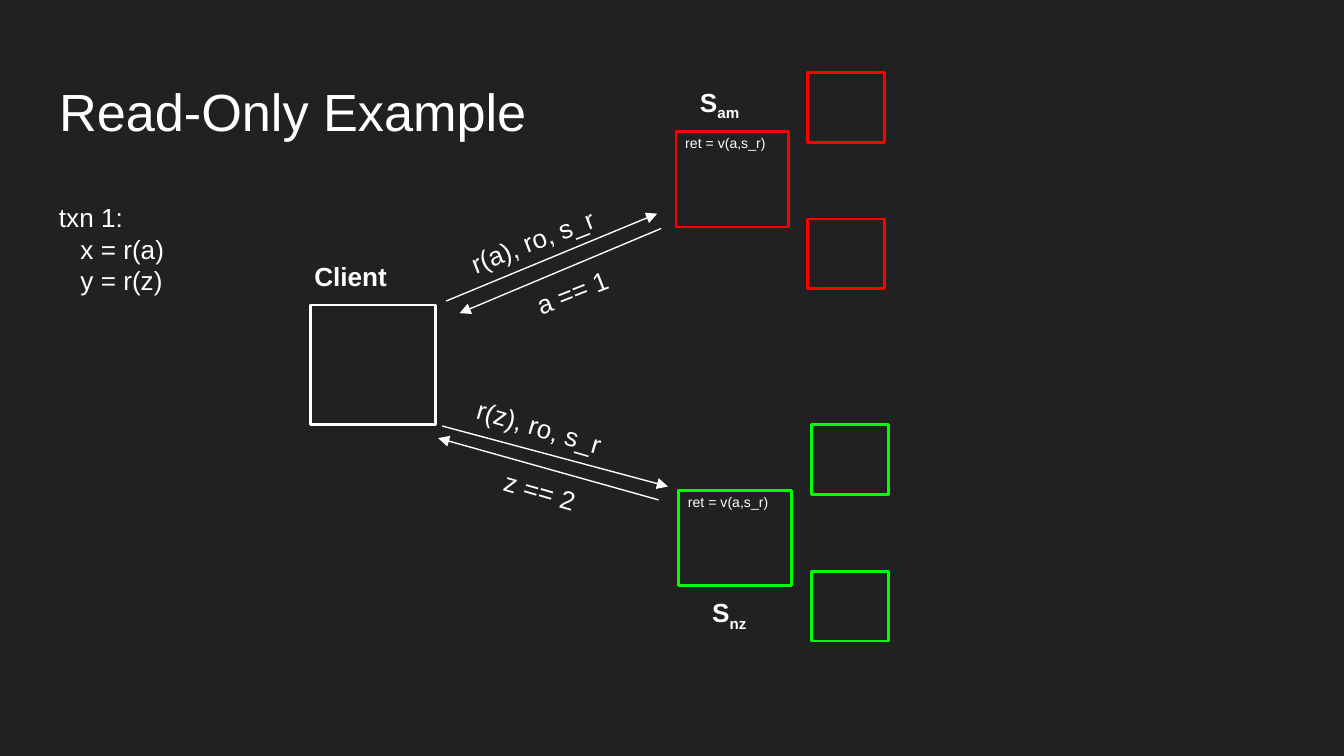
from pptx import Presentation
from pptx.dml.color import RGBColor
from pptx.enum.shapes import MSO_CONNECTOR, MSO_SHAPE
from pptx.enum.text import MSO_ANCHOR, PP_ALIGN
from pptx.oxml.ns import qn
from pptx.util import Inches, Pt
from lxml.etree import SubElement

THEME = {
    "font": "Arial", "bg": "212121", "white": "FFFFFF", "red": "FF0000", "green": "00FF00",
    "title": 28, "body": 14, "note": 13, "box_line": 1.5, "arrow_line": 0.75,
}

# Content: positions are left, top, width, height in inches
TITLE = ("Read-Only Example", (0.34, 0.49, 4.28, 0.63))
TRANSACTION = ("txn 1:", ["x = r(a)", "y = r(z)"])
CLIENT = (2.31, 2.27, 0.93, 0.89)
SERVER_SIZE = (0.84, 0.71)
REPLICA_SIZE = (0.57, 0.52)
REPLICA_STEP = 1.09
SHARDS = [  # colour, server corner, first replica corner, name, name corner
    ("red", (5.03, 0.98), (6.01, 0.54), "am", (5.11, 0.54)),
    ("green", (5.05, 3.65), (6.04, 3.16), "nz", (5.2, 4.34)),
]
RETURN_NOTE = "ret = v(a,s_r)"
MESSAGES = [  # text, start, end, label place, label rotation
    ("r(a), ro, s_r", (3.32, 2.24), (4.89, 1.59), (3.35, 1.57, 1.22, 0.27), -21.3),
    ("a == 1", (4.92, 1.7), (3.42, 2.33), (3.85, 1.95, 0.81, 0.27), -21.3),
    ("r(z), ro, s_r", (3.29, 3.17), (4.97, 3.62), (3.46, 2.98, 1.28, 0.27), 16.3),
    ("z == 2", (4.9, 3.72), (3.26, 3.26), (3.67, 3.45, 0.81, 0.27), 16.2),
]


def color(name):
    return RGBColor.from_string(THEME[name])


def style_text(tf, size="body", bold=False):
    tf.word_wrap = True
    tf.vertical_anchor = MSO_ANCHOR.TOP
    tf.margin_left = tf.margin_right = tf.margin_top = tf.margin_bottom = Inches(0.1)
    for p in tf.paragraphs:
        p.alignment = PP_ALIGN.LEFT
        for r in p.runs:
            r.font.name = THEME["font"]
            r.font.size = Pt(THEME[size])
            r.font.bold = bold
            r.font.color.rgb = color("white")


def add_text(place, text, size="body", bold=False, rotation=0):
    sp = slide.shapes.add_textbox(*map(Inches, place))
    sp.rotation = rotation
    sp.text_frame.text = text
    style_text(sp.text_frame, size, bold)
    return sp.text_frame


def set_baseline(r, percent):
    r.font._element.set("baseline", str(percent * 1000))


def add_box(place, line):
    sp = slide.shapes.add_shape(MSO_SHAPE.RECTANGLE, *map(Inches, place))
    sp.shadow.inherit = False
    sp.fill.background()
    sp.line.color.rgb = color(line)
    sp.line.width = Pt(THEME["box_line"])


def add_arrow(start, end):
    line = slide.shapes.add_connector(MSO_CONNECTOR.STRAIGHT, *map(Inches, start + end))
    line.line.color.rgb = color("white")
    line.line.width = Pt(THEME["arrow_line"])
    SubElement(line.line._get_or_add_ln(), qn("a:tailEnd"), type="triangle")
    SubElement(line._element.spPr, qn("a:effectLst"))


# A 16:9 slide
prs = Presentation()
prs.slide_width, prs.slide_height = Inches(10), Inches(10 * 9 / 16)
slide = prs.slides.add_slide(prs.slide_layouts[5])
slide.background.fill.solid()
slide.background.fill.fore_color.rgb = color("bg")

# Title
title = slide.shapes.title
title.left, title.top, title.width, title.height = map(Inches, TITLE[1])
title.text_frame.text = TITLE[0]
style_text(title.text_frame, "title")

# Transaction, with its reads indented
heading, reads = TRANSACTION
tf = add_text((0.34, 1.4, 1.22, 1.69), "\n".join([heading, *reads]))
for p in tf.paragraphs[1:]:
    p._p.get_or_add_pPr().set("marL", str(Inches(0.16)))

# Client
add_box(CLIENT, "white")
add_text((2.24, 1.84, 0.84, 0.34), "Client", bold=True)

# Servers with their replicas
for line, (x, y), (rx, ry), name, corner in SHARDS:
    add_box((x, y, *SERVER_SIZE), line)
    for i in range(2):
        add_box((rx, ry + i * REPLICA_STEP, *REPLICA_SIZE), line)
    tf = add_text((*corner, 0.72, 0.34), "S", bold=True)
    tf.paragraphs[0].add_run().text = name
    style_text(tf, bold=True)
    set_baseline(tf.paragraphs[0].runs[1], -25)
    tf = add_text((x - 0.03, y - 0.1, 1.08, 0.85), RETURN_NOTE, "note")
    set_baseline(tf.paragraphs[0].runs[0], 30)

# Messages between client and servers
for text, start, end, place, rotation in MESSAGES:
    add_arrow(start, end)
    add_text(place, text, rotation=rotation)

prs.save("out.pptx")
